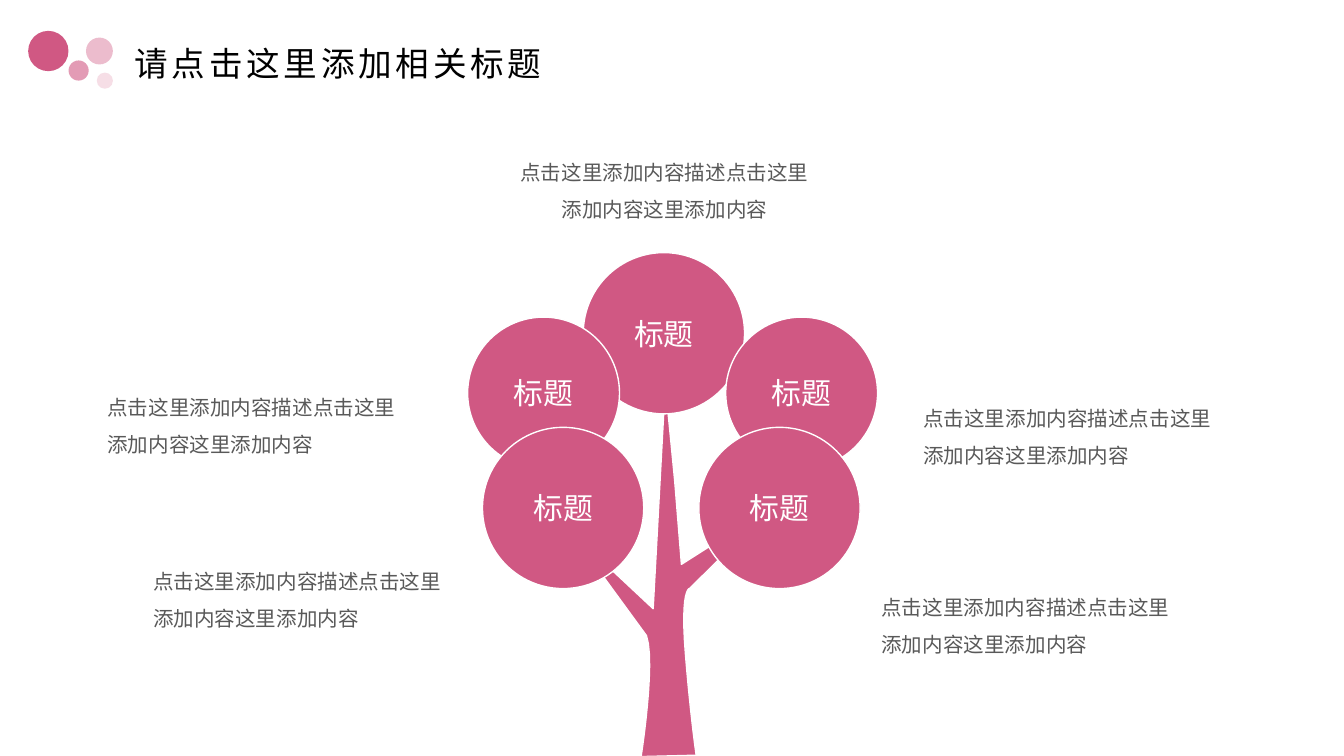
import pptx
import pptx.dml.color
import pptx.enum.shapes
import pptx.enum.text
import pptx.oxml
import pptx.oxml.ns
import pptx.util
from pptx.util import Inches

COLORS = {
    "pink": "D05883",
    "pink_medium": "E39BB5",
    "pink_light": "ECBCCD",
    "pink_pale": "F6DEE6",
    "white": "FFFFFF",
    "black": "000000",
    "grey": "595959",
}
HEADING_FONT = "Noto Sans CJK SC"
BODY_FONT = "Calibri"
ALIGN = pptx.enum.text.PP_ALIGN
ANCHOR = pptx.enum.text.MSO_ANCHOR

TITLE = "请点击这里添加相关标题"
LABEL = "标题"
DESCRIPTION = "点击这里添加内容描述点击这里添加内容这里添加内容"

# left, top, diameter, colour
TITLE_DOTS = [
    (0.21, 0.23, 0.3, "pink"),
    (0.51, 0.45, 0.15, "pink_medium"),
    (0.64, 0.28, 0.2, "pink_light"),
    (0.72, 0.54, 0.12, "pink_pale"),
]
# left, top, diameter, from back to front
CROWNS = [
    (4.34, 1.88, 1.2),
    (5.4, 2.36, 1.13),
    (3.48, 2.36, 1.13),
    (5.2, 3.18, 1.2),
    (3.59, 3.18, 1.2),
]
# left, top, alignment
DESCRIPTIONS = [
    (3.75, 1.05, ALIGN.CENTER),
    (6.77, 2.88, ALIGN.LEFT),
    (6.46, 4.29, ALIGN.LEFT),
    (0.7, 2.8, ALIGN.LEFT),
    (1.04, 4.09, ALIGN.LEFT),
]


def rgb(name):
    return pptx.dml.color.RGBColor.from_string(COLORS[name])


def style_shape(shape, fill, outlined):
    shape.shadow.inherit = False
    shape.fill.solid()
    shape.fill.fore_color.rgb = rgb(fill)
    if outlined:
        shape.line.color.rgb = rgb("white")
        shape.line.width = pptx.util.Pt(0.75)
    else:
        shape.line.fill.background()


def format_text(paragraph, font_name, size, color, alignment):
    paragraph.alignment = alignment
    for run in paragraph.runs:
        run.font.name = font_name
        run.font.size = pptx.util.Pt(size)
        run.font.color.rgb = rgb(color)
        # Chinese characters take the East Asian typeface
        east_asian = pptx.oxml.parse_xml(
            f'<a:ea {pptx.oxml.ns.nsdecls("a")} typeface="{font_name}"/>')
        run.font._element.find(pptx.oxml.ns.qn("a:latin")).addnext(east_asian)


def add_title(slide):
    title = slide.shapes.title
    title.left, title.top = Inches(0.9), Inches(0.19)
    title.width, title.height = Inches(8.62), Inches(0.59)
    title.text_frame.text = TITLE
    title.text_frame.vertical_anchor = ANCHOR.MIDDLE
    title.text_frame.auto_size = pptx.enum.text.MSO_AUTO_SIZE.NONE
    paragraph = title.text_frame.paragraphs[0]
    paragraph.line_spacing = 0.9
    format_text(paragraph, HEADING_FONT, 18, "black", ALIGN.LEFT)
    paragraph.runs[0].font._element.set("spc", "200")


def add_circle(slide, left, top, diameter, fill, outlined=False):
    shape = slide.shapes.add_shape(
        pptx.enum.shapes.MSO_SHAPE.OVAL,
        Inches(left), Inches(top), Inches(diameter), Inches(diameter))
    style_shape(shape, fill, outlined)
    return shape


def add_crown(slide, left, top, diameter):
    shape = add_circle(slide, left, top, diameter, "pink", outlined=True)
    frame = shape.text_frame
    frame.margin_left = frame.margin_right = Inches(0.07)
    frame.margin_top = frame.margin_bottom = Inches(0.04)
    frame.vertical_anchor = ANCHOR.MIDDLE
    frame.text = LABEL
    format_text(frame.paragraphs[0], HEADING_FONT, 16, "white", ALIGN.CENTER)


def curve(start, control_1, control_2, end, steps=12):
    """Points along a cubic Bezier curve, both ends included."""
    points = []
    for step in range(steps + 1):
        t = step / steps
        weights = ((1 - t) ** 3, 3 * t * (1 - t) ** 2, 3 * t ** 2 * (1 - t), t ** 3)
        points.append(tuple(
            sum(weight * value for weight, value in zip(weights, values))
            for values in zip(start, control_1, control_2, end)))
    return points


def add_trunk(slide):
    left_side = curve((4.77, 5.63), (4.77, 5.63), (4.88, 4.93), (4.81, 4.73))
    branches = [(4.24, 3.95), (4.86, 4.53), (4.95, 2.86), (5.02, 3.58),
                (5.07, 4.2), (5.76, 3.76)]
    right_top = curve((5.13, 4.38), (5.13, 4.38), (5.06, 4.38), (5.1, 4.87))
    right_base = curve((5.1, 4.87), (5.14, 5.36), (5.18, 5.62), (5.18, 5.62))
    points = [(Inches(x), Inches(y))
              for x, y in left_side + branches + right_top + right_base[1:]]
    builder = slide.shapes.build_freeform(*points[0])
    builder.add_line_segments(points[1:], close=True)
    style_shape(builder.convert_to_shape(), "pink", outlined=True)


def add_description(slide, left, top, alignment):
    box = slide.shapes.add_textbox(
        Inches(left), Inches(top), Inches(2.39), Inches(0.76))
    box.text_frame.word_wrap = True
    box.text_frame.text = DESCRIPTION
    paragraph = box.text_frame.paragraphs[0]
    paragraph.line_spacing = 1.5
    paragraph.space_after = pptx.util.Pt(6)
    format_text(paragraph, BODY_FONT, 11, "grey", alignment)


def main():
    presentation = pptx.Presentation()
    # Widescreen, 16:9
    presentation.slide_width = Inches(10)
    presentation.slide_height = Inches(10) * 9 // 16
    slide = presentation.slides.add_slide(presentation.slide_layouts[5])

    # Heading with its dots
    for dot in TITLE_DOTS:
        add_circle(slide, *dot)
    add_title(slide)

    # Tree
    add_trunk(slide)
    for crown in CROWNS:
        add_crown(slide, *crown)

    # Descriptions around the tree
    for description in DESCRIPTIONS:
        add_description(slide, *description)

    presentation.save("out.pptx")


if __name__ == "__main__":
    main()
